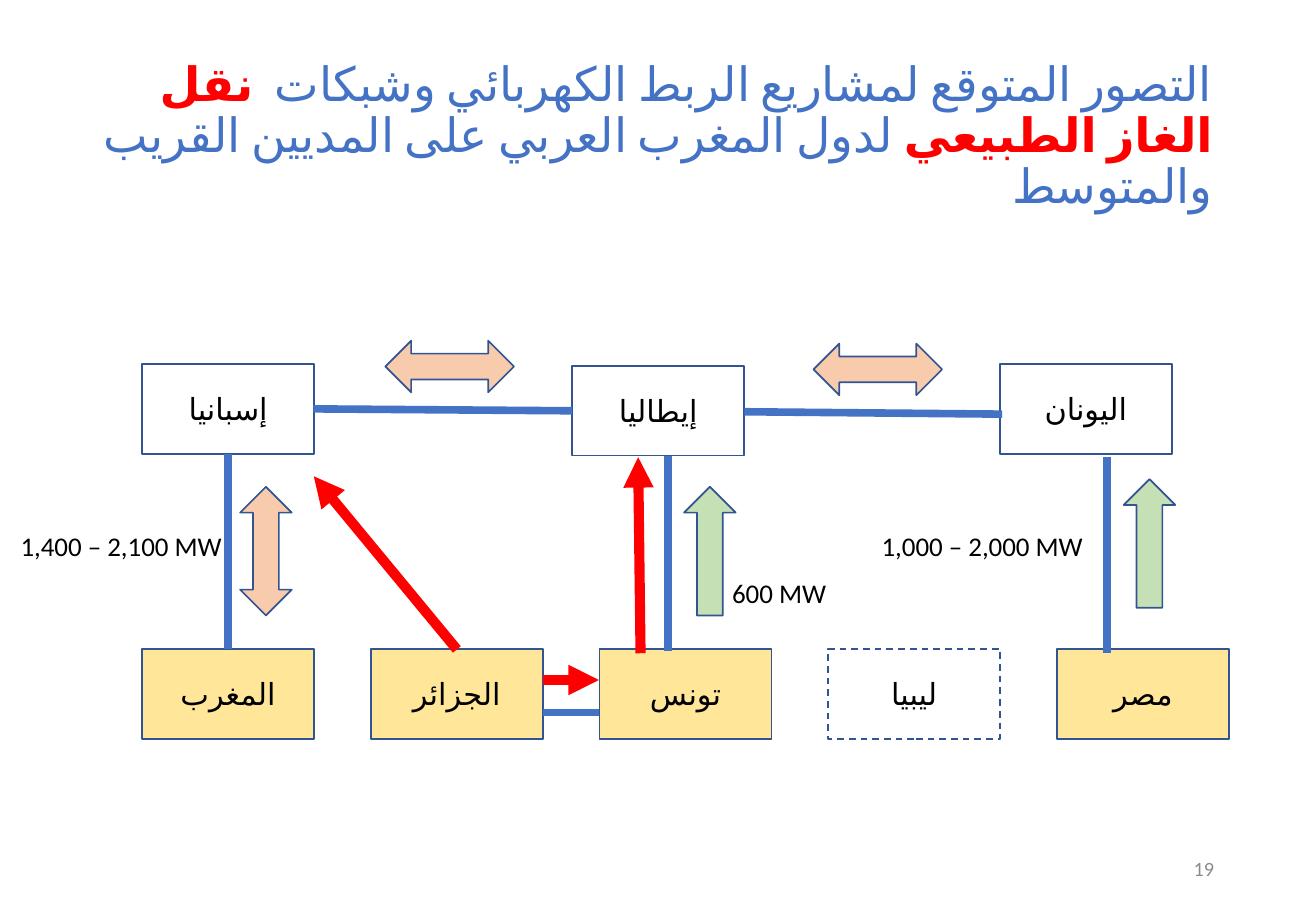
import pptx
import pptx.util
import pptx.dml.color
import pptx.enum.dml
import pptx.enum.lang
import pptx.enum.shapes
import pptx.enum.text
import pptx.oxml
import pptx.oxml.ns

Cm, Pt = pptx.util.Cm, pptx.util.Pt
SHAPE = pptx.enum.shapes.MSO_SHAPE
ALIGN = pptx.enum.text.PP_ALIGN
ANCHOR = pptx.enum.text.MSO_ANCHOR
LANGUAGE = pptx.enum.lang.MSO_LANGUAGE_ID

COLOURS = {
    "blue": "4472C4", "red": "FF0000", "grey": "8C8C8C", "black": "000000",
    "white": "FFFFFF", "yellow": "FFE699", "outline": "325491",
    "orange": "F8CBAD", "green": "C5E0B4",
}
FONT = "Calibri"

# All lengths are in centimetres.
TITLE = [
    ("التصور المتوقع لمشاريع الربط الكهربائي وشبكات  ", "blue", False),
    ("نقل الغاز الطبيعي ", "red", True),
    ("لدول المغرب العربي على المديين القريب والمتوسط", "blue", False),
]
PAGE_NUMBER = [("19", "grey", False)]

BOX_WIDTH, BOX_HEIGHT = 3.6, 1.88
FIRST_LEFT, SOUTH_TOP, SOUTH_STEP = 2.97, 13.57, 4.78
EUROPE = [("إسبانيا", 2.97, 7.61), ("إيطاليا", 11.96, 7.65), ("اليونان", 20.9, 7.61)]
NORTH_AFRICA = [
    ("المغرب", "yellow"), ("الجزائر", "yellow"), ("تونس", "yellow"),
    ("ليبيا", "white"), ("مصر", "yellow"),
]

# Power links: start and end
POWER_LINES = [
    ((4.77, 9.49), (4.77, 13.57)),
    ((13.96, 9.53), (13.96, 13.61)),
    ((23.14, 9.55), (23.14, 13.66)),
    ((6.55, 8.55), (11.96, 8.59)),
    ((15.56, 8.61), (20.95, 8.66)),
    ((12.52, 14.9), (11.35, 14.9)),
]
GAS_PIPELINES = [
    ((9.55, 13.58), (6.56, 9.96)),
    ((13.39, 13.66), (13.34, 9.56)),
    ((11.35, 14.22), (12.52, 14.22)),
]

ARROW_WIDTH, ARROW_LENGTH = 1.08, 2.69
# Exchange arrows: preset, left, top, fill, rotation
EXCHANGES = [
    (SHAPE.UP_DOWN_ARROW, 5.02, 10.18, "orange", 0),
    (SHAPE.UP_ARROW, 14.3, 10.18, "green", 0),
    (SHAPE.UP_ARROW, 23.49, 10.02, "green", 0),
    (SHAPE.UP_DOWN_ARROW, 8.86, 6.32, "orange", 90),
    (SHAPE.UP_DOWN_ARROW, 17.81, 6.38, "orange", 90),
]
# Capacities: text, left, top, width, alignment
CAPACITIES = [
    ("1,400 – 2,100 MW", 0.18, 10.95, 7.8, ALIGN.LEFT),
    ("600 MW", 14.85, 11.94, 2.67, ALIGN.RIGHT),
    ("1,000 – 2,000 MW", 18.18, 10.95, 4.95, ALIGN.LEFT),
]


def colour(name):
    return pptx.dml.color.RGBColor.from_string(COLOURS[name])


def write(owner, runs, size, align, anchor=ANCHOR.MIDDLE, rtl=False, spacing=None,
          language=LANGUAGE.ARABIC):
    """Put one paragraph of (text, colour, bold) runs into a shape."""
    frame = owner.text_frame
    frame.word_wrap = True
    frame.vertical_anchor = anchor
    paragraph = frame.paragraphs[0]
    paragraph.alignment = align
    paragraph.line_spacing = spacing
    if rtl:
        paragraph._p.get_or_add_pPr().set("rtl", "1")
    for text, ink, bold in runs:
        run = paragraph.add_run()
        run.text = text
        run.font.color.rgb = colour(ink)
        style = {"name": FONT, "size": Pt(size), "bold": bold, "language_id": language}
        for key, value in style.items():
            setattr(run.font, key, value)
        properties = run._r.get_or_add_rPr()
        properties.append(properties.makeelement(
            pptx.oxml.ns.qn("a:cs"), {"typeface": FONT}))


def add_text(slide, left, top, width, height, runs, size, align, **layout):
    box = slide.shapes.add_textbox(Cm(left), Cm(top), Cm(width), Cm(height))
    write(box, runs, size, align, **layout)


def add_outlined(slide, preset, left, top, width, height, fill):
    shape = slide.shapes.add_shape(preset, Cm(left), Cm(top), Cm(width), Cm(height))
    shape.shadow.inherit = False
    shape.fill.solid()
    shape.fill.fore_color.rgb = colour(fill)
    shape.line.color.rgb = colour("outline")
    shape.line.width = Pt(1)
    return shape


def add_country(slide, name, left, top, fill):
    box = add_outlined(slide, SHAPE.RECTANGLE, left, top, BOX_WIDTH, BOX_HEIGHT, fill)
    write(box, [(name, "black", False)], 18, ALIGN.CENTER)
    return box


def add_link(slide, start, end, ink, width, arrow=False):
    link = slide.shapes.add_connector(
        pptx.enum.shapes.MSO_CONNECTOR.STRAIGHT, *map(Cm, start + end))
    link.line.color.rgb = colour(ink)
    link.line.width = Pt(width)
    if arrow:
        head = pptx.oxml.ns.qn("a:tailEnd")
        link.line._get_or_add_ln().append(
            link._element.makeelement(head, {"type": "triangle"}))
    properties = link._element.spPr
    properties.append(properties.makeelement(pptx.oxml.ns.qn("a:effectLst"), {}))


def main():
    deck = pptx.Presentation()
    deck.slide_width, deck.slide_height = Cm(27.51), Cm(19.05)
    slide = deck.slides.add_slide(deck.slide_layouts[6])

    add_text(slide, 1.88, 1.02, 23.72, 3.68, TITLE, 28, ALIGN.RIGHT,
             rtl=True, spacing=0.9)
    add_text(slide, 19.43, 17.65, 6.2, 1.02, PAGE_NUMBER, 12, ALIGN.RIGHT, rtl=True)

    for name, left, top in EUROPE:
        add_country(slide, name, left, top, "white")
    for column, (name, fill) in enumerate(NORTH_AFRICA):
        left = FIRST_LEFT + column * SOUTH_STEP
        box = add_country(slide, name, left, SOUTH_TOP, fill)
        if fill == "white":
            box.line.dash_style = pptx.enum.dml.MSO_LINE.DASH

    for start, end in POWER_LINES:
        add_link(slide, start, end, "blue", 4.5)
    for preset, left, top, fill, rotation in EXCHANGES:
        arrow = add_outlined(slide, preset, left, top, ARROW_WIDTH, ARROW_LENGTH, fill)
        arrow.rotation = rotation
    for text, left, top, width, align in CAPACITIES:
        add_text(slide, left, top, width, 0.94, [(text, "black", False)], 16, align,
                 anchor=ANCHOR.TOP, language=LANGUAGE.ENGLISH_US)
    for start, end in GAS_PIPELINES:
        add_link(slide, start, end, "red", 6, arrow=True)

    deck.save("out.pptx")


if __name__ == "__main__":
    main()
